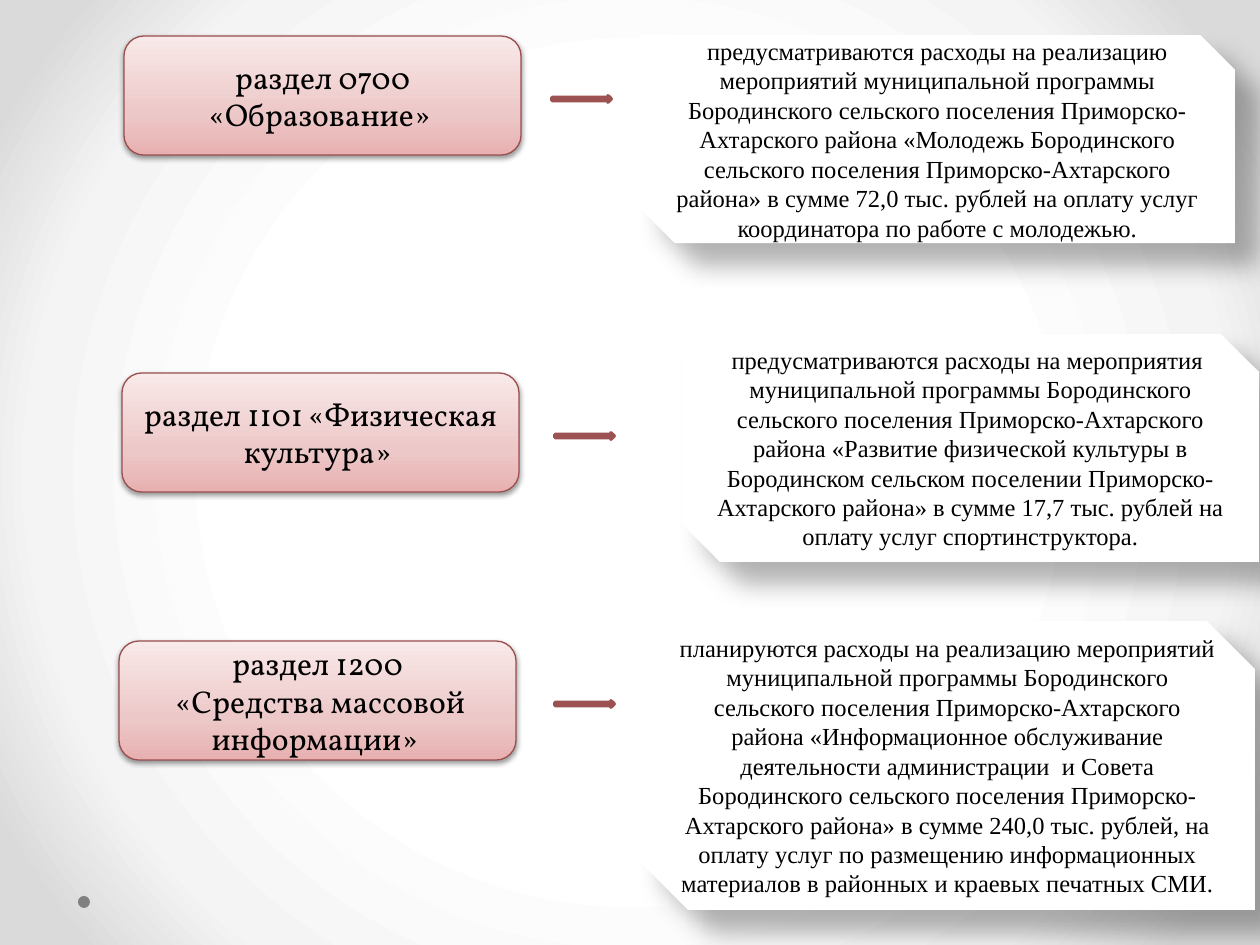
from lxml.etree import SubElement
from pptx import Presentation
from pptx.dml.color import RGBColor
from pptx.enum.shapes import MSO_SHAPE as Kind
from pptx.enum.text import MSO_ANCHOR as Anchor, PP_ALIGN as Align
from pptx.oxml.ns import qn
from pptx.util import Emu, Pt

BLACK = RGBColor(0x00, 0x00, 0x00)
WHITE = RGBColor(0xFF, 0xFF, 0xFF)
GREY = RGBColor(0x80, 0x80, 0x80)
EDGE = RGBColor(0x9A, 0x4E, 0x4E)
ARROW = RGBColor(0x9C, 0x52, 0x52)

# Gradient stops: percent, colour
BACK = [(50, WHITE), (76, RGBColor(0xF4, 0xF4, 0xF4)),
        (92, RGBColor(0xDA, 0xDA, 0xDA))]
PINK = [(0, RGBColor(0xE8, 0xB0, 0xB0)), (35, RGBColor(0xED, 0xC8, 0xC8)),
        (100, RGBColor(0xF9, 0xE9, 0xE9))]

# Shadows: opacity percent, blur pt, distance pt, angle
SOFT = (38, 3.1, 1.6, 90)
DEEP = (30, 15, 18, 45)

# Each row: title, its left and top; arrow left and top; note box, note text
ROWS = [
    ("раздел 0700 «Образование» ", (124, 36), (552, 96), (640, 35, 595, 208),
     "предусматриваются расходы на реализацию мероприятий муниципальной "
     "программы Бородинского сельского поселения Приморско-Ахтарского района "
     "«Молодежь Бородинского сельского поселения Приморско-Ахтарского района» "
     "в сумме 72,0 тыс. рублей на оплату услуг координатора по работе с "
     "молодежью."),
    ("раздел 1101 «Физическая культура» ", (122, 373), (555, 433),
     (682, 334, 577, 228),
     "предусматриваются расходы на мероприятия  муниципальной программы "
     "Бородинского сельского поселения Приморско-Ахтарского района «Развитие "
     "физической культуры в Бородинском сельском поселении "
     "Приморско-Ахтарского района» в сумме 17,7 тыс. рублей на оплату услуг "
     "спортинструктора."),
    ("раздел 1200\n «Средства массовой информации» ", (119, 641), (555, 701),
     (640, 621, 615, 289),
     "планируются расходы на реализацию мероприятий муниципальной программы "
     "Бородинского сельского поселения Приморско-Ахтарского района "
     "«Информационное обслуживание деятельности администрации  и Совета "
     "Бородинского сельского поселения Приморско-Ахтарского района» в сумме "
     "240,0 тыс. рублей, на оплату услуг по размещению информационных "
     "материалов в районных и краевых печатных СМИ."),
]
TITLE = (397, 119)
DASH = (59, 6)
DOT = (78, 896, 12, 12)


def px(n):
    return Emu(round(n * 914400 / 126))


def add_stops(fill, stops):
    """Make the fill a gradient with these stops; return its element."""
    fill.gradient()
    grad = fill._xPr.find(qn("a:gradFill"))
    ramp = grad.find(qn("a:gsLst"))
    for old in list(ramp):
        ramp.remove(old)
    for pos, color in stops:
        stop = SubElement(ramp, qn("a:gs"), pos=str(pos * 1000))
        SubElement(stop, qn("a:srgbClr"), val=str(color))
    return grad


def add_shape(kind, box, fill, line=None, width=0, shadow=None):
    shape = slide.shapes.add_shape(kind, *map(px, box))
    if isinstance(fill, list):
        add_stops(shape.fill, fill)
        shape.fill.gradient_angle = 90
        shape.fill._xPr.find(qn("a:gradFill")).find(qn("a:lin")).set(
            "ang", str(270 * 60000))
    else:
        shape.fill.solid()
        shape.fill.fore_color.rgb = fill
    if line is None:
        shape.line.fill.background()
    else:
        shape.line.color.rgb = line
        shape.line.width = Pt(width)
    shape.shadow.inherit = False
    if shadow:
        alpha, blur, dist, angle = shadow
        effects = shape._element.spPr.find(qn("a:effectLst"))
        outer = SubElement(effects, qn("a:outerShdw"), blurRad=str(Pt(blur)),
                           dist=str(Pt(dist)), dir=str(angle * 60000),
                           rotWithShape="0")
        tone = SubElement(outer, qn("a:srgbClr"), val=str(BLACK))
        SubElement(tone, qn("a:alpha"), val=str(alpha * 1000))
    return shape


def set_text(shape, text, font, size):
    frame = shape.text_frame
    frame.text = text
    frame.word_wrap = True
    frame.vertical_anchor = Anchor.MIDDLE
    for par in frame.paragraphs:
        par.alignment = Align.CENTER
        for run in par.runs:
            run.font.name = font
            run.font.size = Pt(size)
            run.font.color.rgb = BLACK


deck = Presentation()
deck.slide_width, deck.slide_height = px(1260), px(945)
slide = deck.slides.add_slide(deck.slide_layouts[6])

# Round background glow
glow = add_stops(slide.background.fill, BACK)
glow.remove(glow.find(qn("a:lin")))
ring = SubElement(glow, qn("a:path"), path="circle")
SubElement(ring, qn("a:fillToRect"), l="50000", t="50000", r="50000", b="50000")

# Corner dot
add_shape(Kind.OVAL, DOT, GREY)

# Section, arrow and note in each row
for title, spot, tip, box, note in ROWS:
    head = add_shape(Kind.ROUNDED_RECTANGLE, spot + TITLE, PINK, EDGE, 0.75, SOFT)
    set_text(head, title, "Vollkorn", 18)
    card = add_shape(Kind.SNIP_2_DIAG_RECTANGLE, box, WHITE, shadow=DEEP)
    set_text(card, note, "Times New Roman", 14)
    add_shape(Kind.RIGHT_ARROW, tip + DASH, WHITE, ARROW, 2.25)

deck.save("out.pptx")
